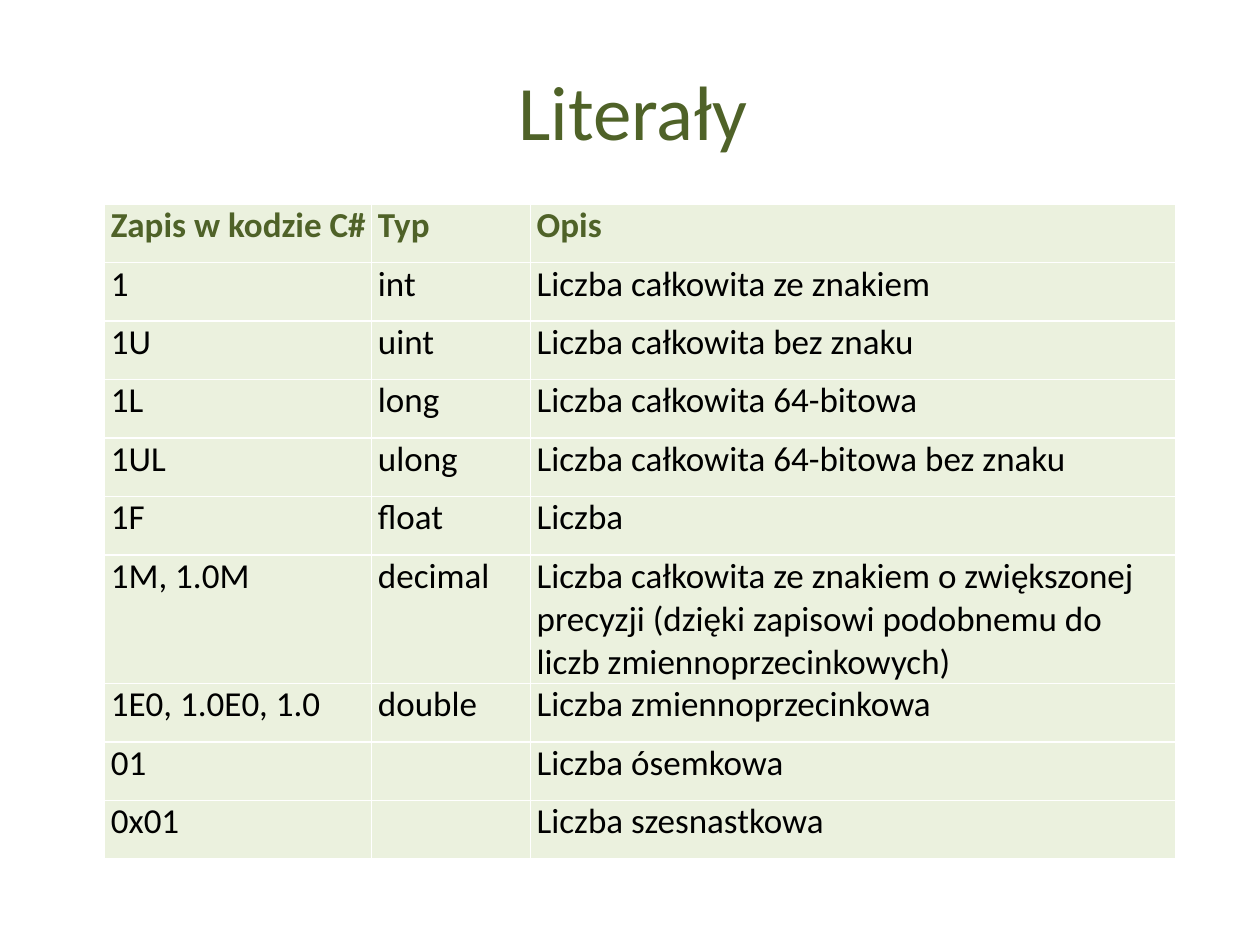
"""Build a slide with a table of C# literals."""
from lxml import etree
from pptx import Presentation
from pptx.dml.color import RGBColor
from pptx.enum.text import MSO_ANCHOR, PP_ALIGN
from pptx.oxml.ns import qn
from pptx.util import Inches, Pt

MIDDLE = MSO_ANCHOR.MIDDLE
CENTER = PP_ALIGN.CENTER
OLIVE = RGBColor(0x4F, 0x62, 0x28)
PALE_GREEN = RGBColor(0xEB, 0xF1, 0xDE)
BLACK = RGBColor(0, 0, 0)
WHITE = RGBColor(0xFF, 0xFF, 0xFF)
FONT = "Calibri"

HEADING = "Literały"
LITERALS = [
    ("Zapis w kodzie C#", "Typ", "Opis"),
    ("1", "int", "Liczba całkowita ze znakiem"),
    ("1U", "uint", "Liczba całkowita bez znaku"),
    ("1L", "long", "Liczba całkowita 64-bitowa"),
    ("1UL", "ulong", "Liczba całkowita 64-bitowa bez znaku"),
    ("1F", "float", "Liczba"),
    ("1M, 1.0M", "decimal",
     "Liczba całkowita ze znakiem o zwiększonej precyzji "
     "(dzięki zapisowi podobnemu do liczb zmiennoprzecinkowych)"),
    ("1E0, 1.0E0, 1.0", "double", "Liczba zmiennoprzecinkowa"),
    ("01", "", "Liczba ósemkowa"),
    ("0x01", "", "Liczba szesnastkowa"),
]
COLUMN_WIDTHS = (2.12, 1.26, 5.12)
TABLE_HEIGHT = 5.2
DECIMAL_ROW, DECIMAL_HEIGHT = 6, 1.02
ROW_HEIGHT = (TABLE_HEIGHT - DECIMAL_HEIGHT) / (len(LITERALS) - 1)


def style_font(paragraph, size, color, bold=False):
    font = paragraph.font
    font.name, font.size, font.bold = FONT, Pt(size), bold
    font.color.rgb = color


def add_borders(cell):
    properties = cell._tc.get_or_add_tcPr()
    for index, side in enumerate(("a:lnL", "a:lnR", "a:lnT", "a:lnB")):
        line = etree.Element(qn(side), w=str(Pt(1)))
        fill = etree.SubElement(line, qn("a:solidFill"))
        etree.SubElement(fill, qn("a:srgbClr"), val=str(WHITE))
        properties.insert(index, line)


def add_heading(slide):
    heading = slide.shapes.add_textbox(
        Inches(0.2), Inches(0.51), Inches(9.65), Inches(0.72)).text_frame
    heading.word_wrap = True
    heading.vertical_anchor = MIDDLE
    paragraph = heading.paragraphs[0]
    paragraph.text = HEADING
    paragraph.alignment = CENTER
    style_font(paragraph, 44, OLIVE)


def fill_cell(cell, text, is_header):
    cell.margin_left, cell.margin_right = Inches(0.05), Inches(0.04)
    cell.margin_top = cell.margin_bottom = 0
    cell.fill.solid()
    cell.fill.fore_color.rgb = PALE_GREEN
    add_borders(cell)
    paragraph = cell.text_frame.paragraphs[0]
    if text:
        paragraph.text = text
    paragraph.space_after = Pt(6)
    style_font(paragraph, 20, OLIVE if is_header else BLACK, is_header)


def add_literals(slide):
    table = slide.shapes.add_table(
        len(LITERALS), len(COLUMN_WIDTHS), Inches(0.83), Inches(1.62),
        Inches(sum(COLUMN_WIDTHS)), Inches(TABLE_HEIGHT)).table
    table.horz_banding = False
    for column, width in zip(table.columns, COLUMN_WIDTHS):
        column.width = Inches(width)
    for index, (row, texts) in enumerate(zip(table.rows, LITERALS)):
        row.height = Inches(DECIMAL_HEIGHT if index == DECIMAL_ROW else ROW_HEIGHT)
        for cell, text in zip(row.cells, texts):
            fill_cell(cell, text, index == 0)


def main():
    deck = Presentation()
    deck.slide_width, deck.slide_height = Inches(10), Inches(7.5)
    slide = deck.slides.add_slide(deck.slide_layouts[6])
    add_heading(slide)
    add_literals(slide)
    deck.save("out.pptx")


if __name__ == "__main__":
    main()
